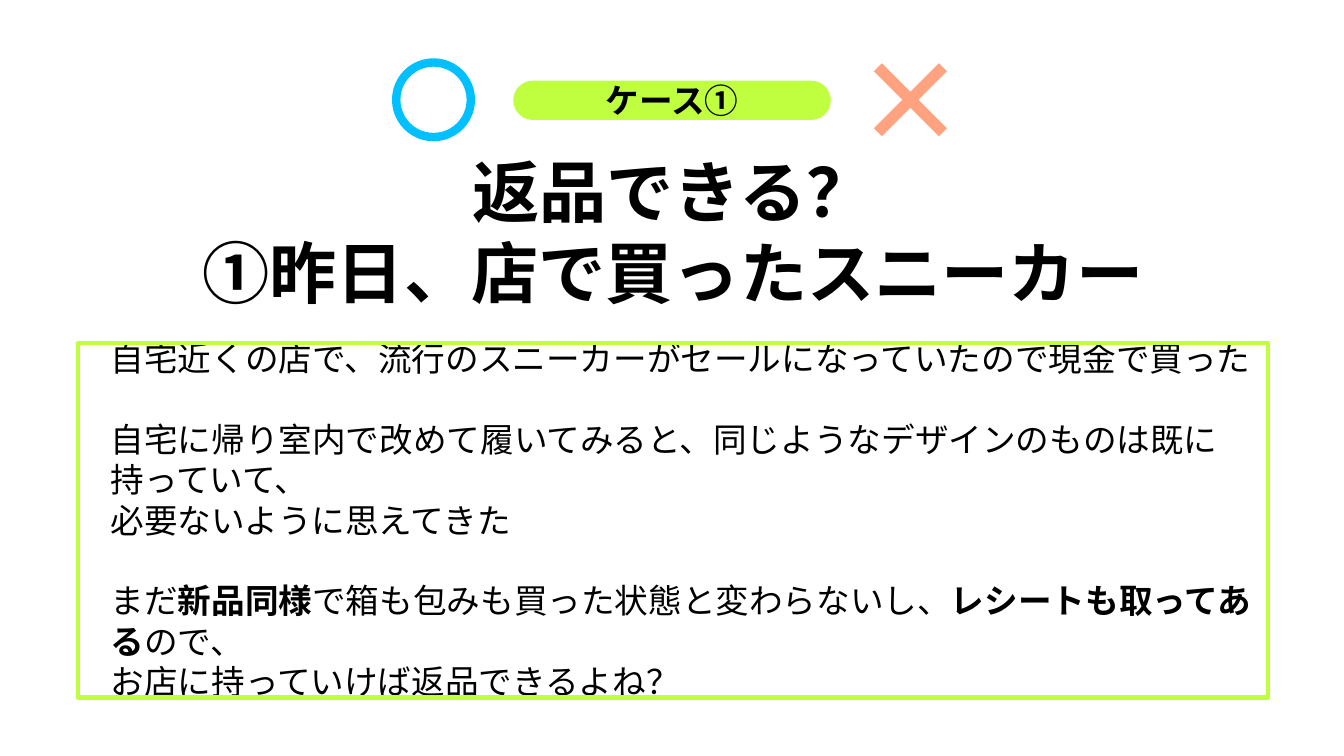
from lxml import etree
from pptx import Presentation
from pptx.dml.color import RGBColor
from pptx.enum.shapes import MSO_SHAPE
from pptx.enum.text import MSO_ANCHOR, MSO_AUTO_SIZE, PP_ALIGN
from pptx.oxml.ns import qn
from pptx.util import Inches, Pt

CENTER = PP_ALIGN.CENTER
LEFT = PP_ALIGN.LEFT
MIDDLE = MSO_ANCHOR.MIDDLE
NO_AUTOFIT = MSO_AUTO_SIZE.NONE
GROW = MSO_AUTO_SIZE.SHAPE_TO_FIT_TEXT
ROUNDED, RECTANGLE = MSO_SHAPE.ROUNDED_RECTANGLE, MSO_SHAPE.RECTANGLE
OVAL, MULTIPLY = MSO_SHAPE.OVAL, MSO_SHAPE.MATH_MULTIPLY

FONT = "Noto Sans CJK JP"
BLACK = RGBColor(0x00, 0x00, 0x00)
LIME = RGBColor(0xC0, 0xFF, 0x40)
BLUE = RGBColor(0x00, 0xC0, 0xFF)
SALMON = RGBColor(0xFF, 0xA2, 0x80)


def write_paragraph(paragraph, runs, size, alignment):
    paragraph.alignment = alignment
    paragraph.line_spacing = Pt(size * 1.2)
    for text, bold in runs:
        run = paragraph.add_run()
        run.text = text
        font_format = {"name": FONT, "size": Pt(size), "bold": bold}
        for attribute, value in font_format.items():
            setattr(run.font, attribute, value)
        run.font.color.rgb = BLACK
        east_asian = etree.SubElement(run.font._element, qn("a:ea"))
        east_asian.set("typeface", FONT)


def add_mark(kind, box, fill=None, line=None, width=0, adjustment=None):
    shape = slide.shapes.add_shape(kind, *[Inches(length) for length in box])
    shape.shadow.inherit = False
    if fill is None:
        shape.fill.background()
    else:
        shape.fill.solid()
        shape.fill.fore_color.rgb = fill
    if line is None:
        shape.line.fill.background()
    else:
        shape.line.color.rgb = line
        shape.line.width = Pt(width)
    if adjustment is not None:
        shape.adjustments[0] = adjustment
    return shape


presentation = Presentation()
presentation.slide_width = Inches(13.33)
presentation.slide_height = Inches(7.5)
slide = presentation.slides.add_slide(presentation.slide_layouts[5])

title = slide.shapes.title
title_box = {"left": 0.69, "top": 1.51, "width": 11.97, "height": 1.57}
for attribute, value in title_box.items():
    setattr(title, attribute, Inches(value))

case_label = add_mark(ROUNDED, (5.09, 0.8, 3.15, 0.39), fill=LIME, adjustment=0.5)

frame_format = {
    "margin_left": 0, "margin_top": 0, "margin_right": 0, "margin_bottom": 0,
    "vertical_anchor": MIDDLE, "word_wrap": True, "auto_size": NO_AUTOFIT,
}
headings = [
    (title, ["返品できる？", "①昨日、店で買ったスニーカー"], 48),
    (case_label, ["ケース①"], 24),
]
for shape, lines, size in headings:
    frame = shape.text_frame
    for attribute, value in frame_format.items():
        setattr(frame, attribute, value)
    for index, line in enumerate(lines):
        paragraph = frame.add_paragraph() if index else frame.paragraphs[0]
        write_paragraph(paragraph, [(line, True)], size, CENTER)

story = [
    (0, [("自宅近くの店で、流行のスニーカーがセールになっていたので現金で買った", False)]),
    (28.8, [("自宅に帰り室内で改めて履いてみると、同じようなデザインのものは既に持っていて、", False)]),
    (0, [("必要ないように思えてきた", False)]),
    (28.8, [
        ("まだ", False),
        ("新品同様", True),
        ("で箱も包みも買った状態と変わらないし、", False),
        ("レシートも取ってある", True),
        ("ので、", False),
    ]),
    (0, [("お店に持っていけば返品できるよね？", False)]),
]
story_box = slide.shapes.add_textbox(Inches(0.8), Inches(3.69), Inches(11.81), Inches(2.93))
frame = story_box.text_frame
frame.word_wrap = True
frame.vertical_anchor = MIDDLE
frame.auto_size = GROW
for index, (space_before, runs) in enumerate(story):
    paragraph = frame.add_paragraph() if index else frame.paragraphs[0]
    write_paragraph(paragraph, runs, 24, LEFT)
    paragraph.space_before = Pt(space_before)
    properties = paragraph._p.get_or_add_pPr()
    properties.set("marL", str(Inches(0.2)))
    properties.set("indent", "0")

add_mark(RECTANGLE, (0.77, 3.4, 11.81, 3.52), line=LIME, width=3)
add_mark(OVAL, (3.93, 0.62, 0.74, 0.74), line=BLUE, width=6)
add_mark(MULTIPLY, (8.41, 0.37, 1.24, 1.24), fill=SALMON, adjustment=0.09)

presentation.save("out.pptx")
